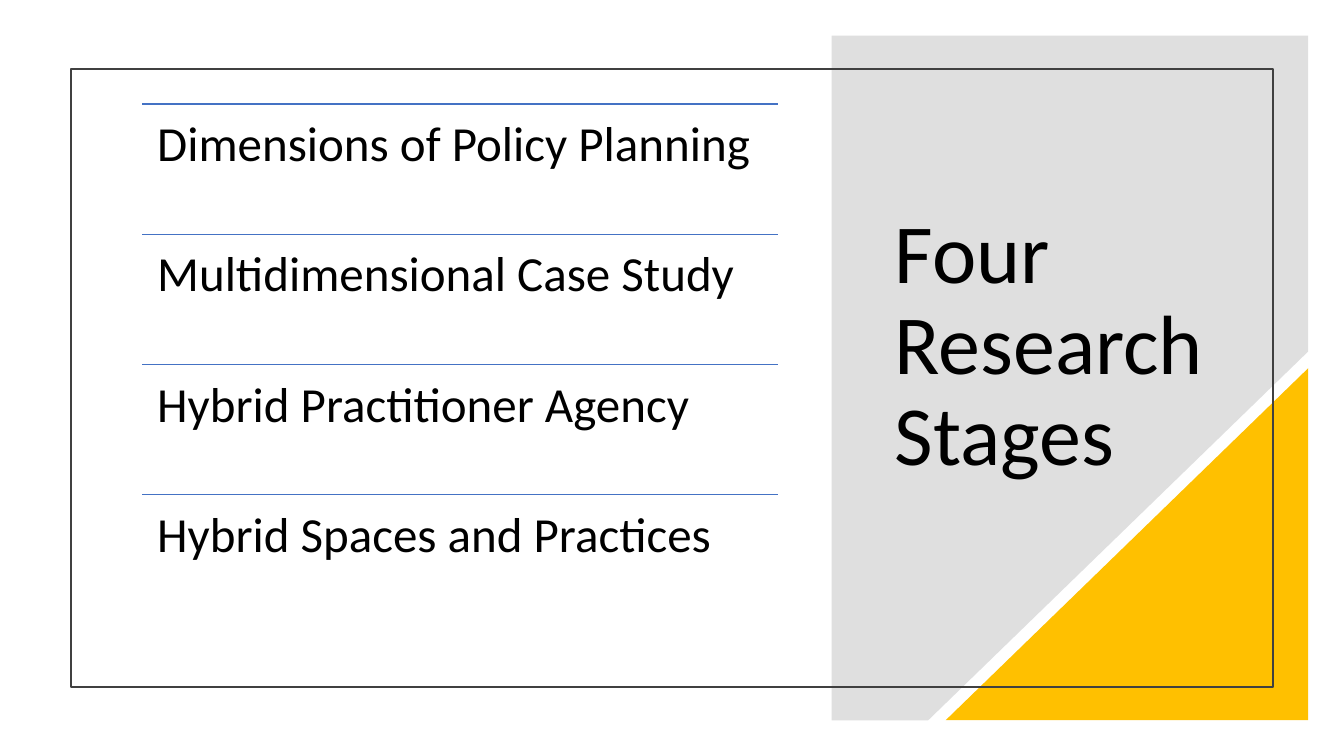
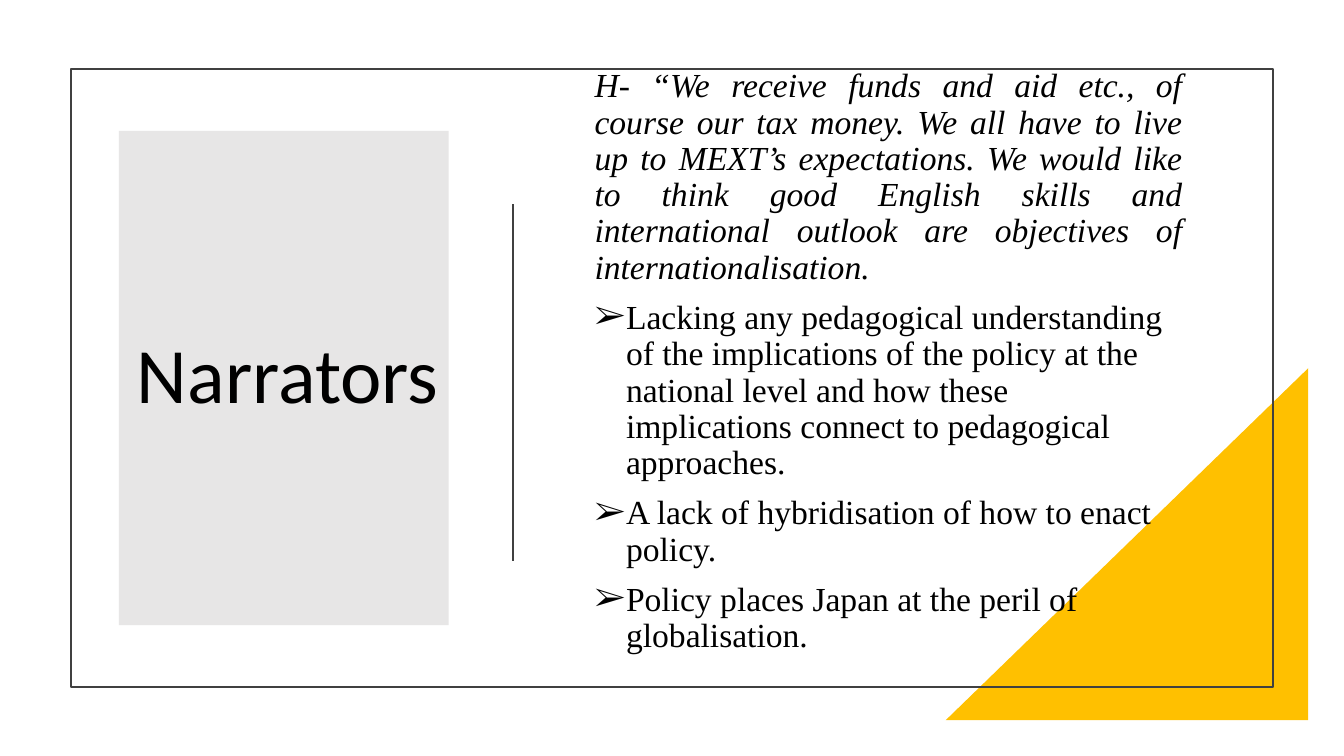
import pptx
import pptx.util
import pptx.dml.color
import pptx.enum.shapes
import pptx.enum.text
import pptx.oxml
import pptx.oxml.ns
from lxml import etree

Pt = pptx.util.Pt
SHAPE = pptx.enum.shapes.MSO_SHAPE
LINE = pptx.enum.shapes.MSO_CONNECTOR.STRAIGHT
ALIGN = pptx.enum.text.PP_ALIGN
ANCHOR = pptx.enum.text.MSO_ANCHOR

STAGES = (
    "Dimensions of Policy Planning",
    "Multidimensional Case Study",
    "Hybrid Practitioner Agency",
    "Hybrid Spaces and Practices",
)
QUOTE = (
    "H- “We receive funds and aid etc., of course our tax money. "
    "We all have to live up to MEXT’s expectations. We would like to think "
    "good English skills and international outlook are objectives of "
    "internationalisation."
)
POINTS = (
    "Lacking any pedagogical understanding of the implications of the policy "
    "at the national level and how these implications connect to pedagogical "
    "approaches.",
    "A lack of hybridisation of how to enact policy.",
    "Policy places Japan at the peril of globalisation.",
)

THEME = {
    "ink": "000000", "frame": "404040", "rule": "4472C4",
    "gold": "FFC000", "panel": "808080", "card": "E7E6E6",
    "sans": "Calibri", "serif": "Times New Roman",
    "title": 60, "label": 56, "stage": 35, "body": 24,
}
FRAME = (50.5, 49, 859, 441.5)
CORNER = (675.5, 263, 259, 251.5)
PANEL = ((594, 25.5), (934.5, 25.5), (934.5, 251), (663, 514.5), (594, 514.5))


def color(name):
    return pptx.dml.color.RGBColor.from_string(THEME[name])


def apply(item, values):
    for name, value in values.items():
        setattr(item, name, value)


def paint(shape, fill=None, line=None):
    shape.shadow.inherit = False
    if fill:
        shape.fill.solid()
        shape.fill.fore_color.rgb = color(fill)
    else:
        shape.fill.background()
    if line:
        shape.line.color.rgb = color(line)
        shape.line.width = Pt(1.5)
    else:
        shape.line.fill.background()
    return shape


def block(slide, kind, box, fill=None, line=None):
    shape = slide.shapes.add_shape(kind, *map(Pt, box))
    return paint(shape, fill, line)


def rule(slide, start, end, ink, width):
    line = slide.shapes.add_connector(LINE, *map(Pt, start + end))
    line.line.color.rgb = color(ink)
    line.line.width = Pt(width)
    etree.SubElement(line._element.spPr, pptx.oxml.ns.qn("a:effectLst"))


def write(shape, parts, size, face="sans", pad=(7.2, 3.6), anchor=ANCHOR.MIDDLE):
    frame = shape.text_frame
    side, edge = map(Pt, pad)
    apply(frame, {
        "word_wrap": True, "vertical_anchor": anchor,
        "margin_left": side, "margin_right": side,
        "margin_top": edge, "margin_bottom": edge,
    })
    for i, (text, form) in enumerate(parts):
        para = frame.paragraphs[0] if i == 0 else frame.add_paragraph()
        apply(para, {"alignment": ALIGN.LEFT, "line_spacing": 0.9, **form})
        run = para.add_run()
        run.text = text
        apply(run.font, {"size": Pt(THEME[size]), "name": THEME[face]})
        run.font.color.rgb = color("ink")
    return frame


def label(slide, box, *args, **more):
    return write(slide.shapes.add_textbox(*map(Pt, box)), *args, **more)


def bullet(para, left, hang):
    props = para._p.get_or_add_pPr()
    props.set("marL", str(Pt(left)))
    props.set("indent", str(Pt(-hang)))
    if hang:
        font = etree.SubElement(props, pptx.oxml.ns.qn("a:buFont"))
        font.set("typeface", THEME["serif"])
        mark = etree.SubElement(props, pptx.oxml.ns.qn("a:buChar"))
        mark.set("char", "➢")


def base(deck):
    return deck.slides.add_slide(deck.slide_layouts[6])


def decor(slide):
    corner = block(slide, SHAPE.RIGHT_TRIANGLE, CORNER, "gold")
    corner._element.spPr.xfrm.set("flipH", "1")
    block(slide, SHAPE.RECTANGLE, FRAME, line="frame")


def stages(deck):
    slide = base(deck)
    first, *rest = [tuple(map(Pt, spot)) for spot in PANEL]
    path = slide.shapes.build_freeform(*first)
    path.add_line_segments(rest, close=True)
    panel = paint(path.convert_to_shape(), "panel")
    tint = panel._element.spPr.find(".//" + pptx.oxml.ns.qn("a:srgbClr"))
    etree.SubElement(tint, pptx.oxml.ns.qn("a:alpha")).set("val", "25000")
    decor(slide)
    label(slide, (632, 119.5, 257, 257), [("Four Research Stages", {})], "title")
    left, top, width, step = 101.5, 74.4, 454.5, 93
    for i, text in enumerate(STAGES):
        y = top + i * step
        rule(slide, (left, y), (left + width, y), "rule", 1)
        label(slide, (left, y, width, step), [(text, {})], "stage",
              pad=(10.8, 10.8), anchor=ANCHOR.TOP)


def voices(deck):
    slide = base(deck)
    decor(slide)
    card = block(slide, SHAPE.RECTANGLE, (85, 93.5, 235.5, 353), "card")
    write(card, [("Narrators", {"alignment": ALIGN.RIGHT})], "label")
    rule(slide, (366.5, 146), (366.5, 401), "frame", 1.5)
    form = {"space_before": Pt(10)}
    parts = [(QUOTE, {**form, "alignment": ALIGN.JUSTIFY})]
    parts += [(text, form) for text in POINTS]
    frame = label(slide, (399.6, 49, 452, 419), parts, "body", "serif")
    quote, *points = frame.paragraphs
    quote.runs[0].font.italic = True
    bullet(quote, 18, 0)
    for para in points:
        bullet(para, 40.5, 22.5)


def main():
    deck = pptx.Presentation()
    apply(deck, {"slide_width": Pt(960), "slide_height": Pt(540)})
    stages(deck)
    voices(deck)
    deck.save("out.pptx")


if __name__ == "__main__":
    main()
